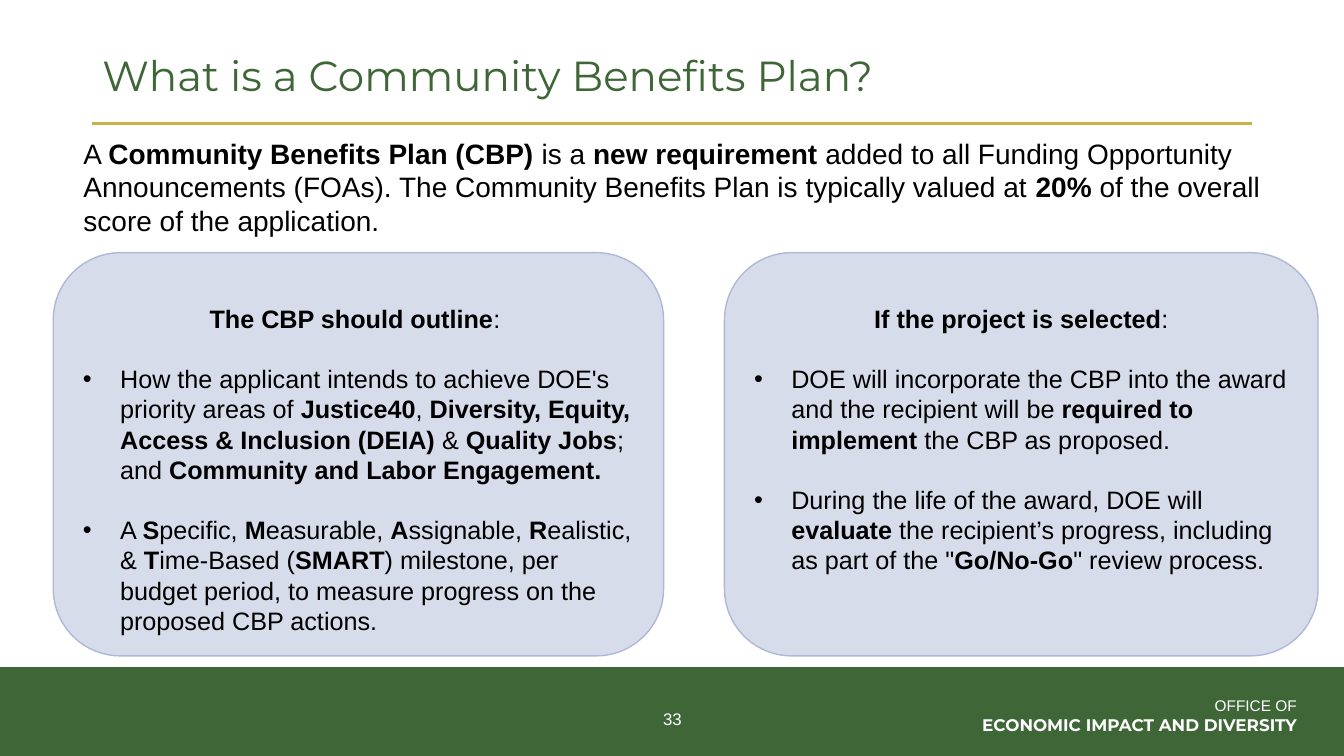
from lxml import etree
from pptx import Presentation
from pptx.dml.color import RGBColor
from pptx.enum.shapes import MSO_CONNECTOR, MSO_SHAPE
from pptx.enum.text import MSO_ANCHOR, PP_ALIGN
from pptx.oxml.ns import qn
from pptx.util import Pt

LEFT, CENTER, RIGHT = PP_ALIGN.LEFT, PP_ALIGN.CENTER, PP_ALIGN.RIGHT
TOP, MIDDLE = MSO_ANCHOR.TOP, MSO_ANCHOR.MIDDLE
GREEN, GOLD, WHITE, BLACK = "3E6637", "CBB045", "FFFFFF", "000000"
PALE, EDGE = "D7DCEB", "AFB8D7"
HANG = 26.64


def color(code):
    return RGBColor.from_string(code)


def write(para, text, size, code, align=LEFT, face="Arial"):
    """Fill a paragraph; text between ** marks is bold."""
    para.alignment = align
    for i, part in enumerate(text.split("**")):
        if part:
            run = para.add_run()
            run.text = part
            run.font.size = Pt(size)
            run.font.name = face
            run.font.bold = i % 2 == 1
            run.font.color.rgb = color(code)


deck = Presentation()
deck.slide_width, deck.slide_height = Pt(960), Pt(540)
slide = deck.slides.add_slide(deck.slide_layouts[6])
shapes = slide.shapes

# Footer band and title rule
band = shapes.add_shape(MSO_SHAPE.RECTANGLE, Pt(0), Pt(476.5), Pt(960), Pt(63.5))
band.shadow.inherit = False
band.fill.solid()
band.fill.fore_color.rgb = color(GREEN)
band.line.fill.background()

rule = shapes.add_connector(MSO_CONNECTOR.STRAIGHT, Pt(66), Pt(88.3), Pt(894), Pt(88.3))
rule.line.color.rgb = color(GOLD)
rule.line.width = Pt(2)
etree.SubElement(rule._element.spPr, qn("a:effectLst"))

# Text boxes: place, anchor, side and end insets, then lines
intro = (
    "A **Community Benefits Plan (CBP)** is a **new requirement** added to all "
    "Funding Opportunity Announcements (FOAs). The Community Benefits Plan is "
    "typically valued at **20%** of the overall score of the application."
)
boxes = [
    ((66, 18.7, 828, 70), MIDDLE, 7.2, 3.6,
     [("What is a Community Benefits Plan?", 30, GREEN, LEFT, "Montserrat")]),
    ((52.5, 93.6, 855.5, 82), TOP, 7.2, 3.6, [(intro, 20, BLACK)]),
    ((453, 499, 54.5, 29), MIDDLE, 7.2, 7.2, [("33", 12, WHITE, CENTER)]),
    ((535.5, 497, 391, 28), MIDDLE, 0, 0,
     [("OFFICE OF", 11, WHITE, RIGHT),
      ("**ECONOMIC IMPACT AND DIVERSITY**", 12, WHITE, RIGHT, "Montserrat")]),
]
for place, anchor, side, end, lines in boxes:
    frame = shapes.add_textbox(*map(Pt, place)).text_frame
    frame.word_wrap = True
    frame.vertical_anchor = anchor
    frame.margin_left = frame.margin_right = Pt(side)
    frame.margin_top = frame.margin_bottom = Pt(end)
    for i, line in enumerate(lines):
        para = frame.add_paragraph() if i else frame.paragraphs[0]
        write(para, *line)

# Rounded cards: left, width, heading, bullets
cards = [
    (38, 436, "**The CBP should outline**: ", [
        "How the applicant intends to achieve DOE's priority areas of **Justice40**, "
        "**Diversity, Equity, Access & Inclusion (DEIA)** & **Quality Jobs**; "
        "and **Community and Labor Engagement.**",
        "A **S**pecific, **M**easurable, **A**ssignable, **R**ealistic, & "
        "**T**ime-Based (**SMART**) milestone, per budget period, to measure "
        "progress on the proposed CBP actions.",
    ]),
    (517.5, 424, "**If the project is selected**:", [
        "DOE will incorporate the CBP into the award and the recipient will be "
        "**required to implement** the CBP as proposed.",
        "During the life of the award, DOE will **evaluate** the recipient’s "
        "progress, including as part of the \"**Go/No-Go**\" review process.",
    ]),
]
for left, width, head, points in cards:
    card = shapes.add_shape(MSO_SHAPE.ROUNDED_RECTANGLE,
                            Pt(left), Pt(180.5), Pt(width), Pt(288))
    card.shadow.inherit = False
    card.fill.solid()
    card.fill.fore_color.rgb = color(PALE)
    card.line.color.rgb = color(EDGE)
    card.line.width = Pt(1)
    frame = card.text_frame
    frame.word_wrap = True
    frame.vertical_anchor = TOP
    frame.margin_left = frame.margin_right = Pt(7.2)
    frame.margin_top, frame.margin_bottom = Pt(22), Pt(0)
    write(frame.paragraphs[0], head, 18, BLACK, CENTER)
    for point in points:
        para = frame.add_paragraph()
        para.space_before = Pt(21.5)
        props = para._p.get_or_add_pPr()
        props.set("marL", str(Pt(HANG)))
        props.set("indent", str(Pt(-HANG)))
        etree.SubElement(props, qn("a:buFont")).set("typeface", "Arial")
        etree.SubElement(props, qn("a:buChar")).set("char", "•")
        write(para, point, 18, BLACK)

deck.save("out.pptx")
